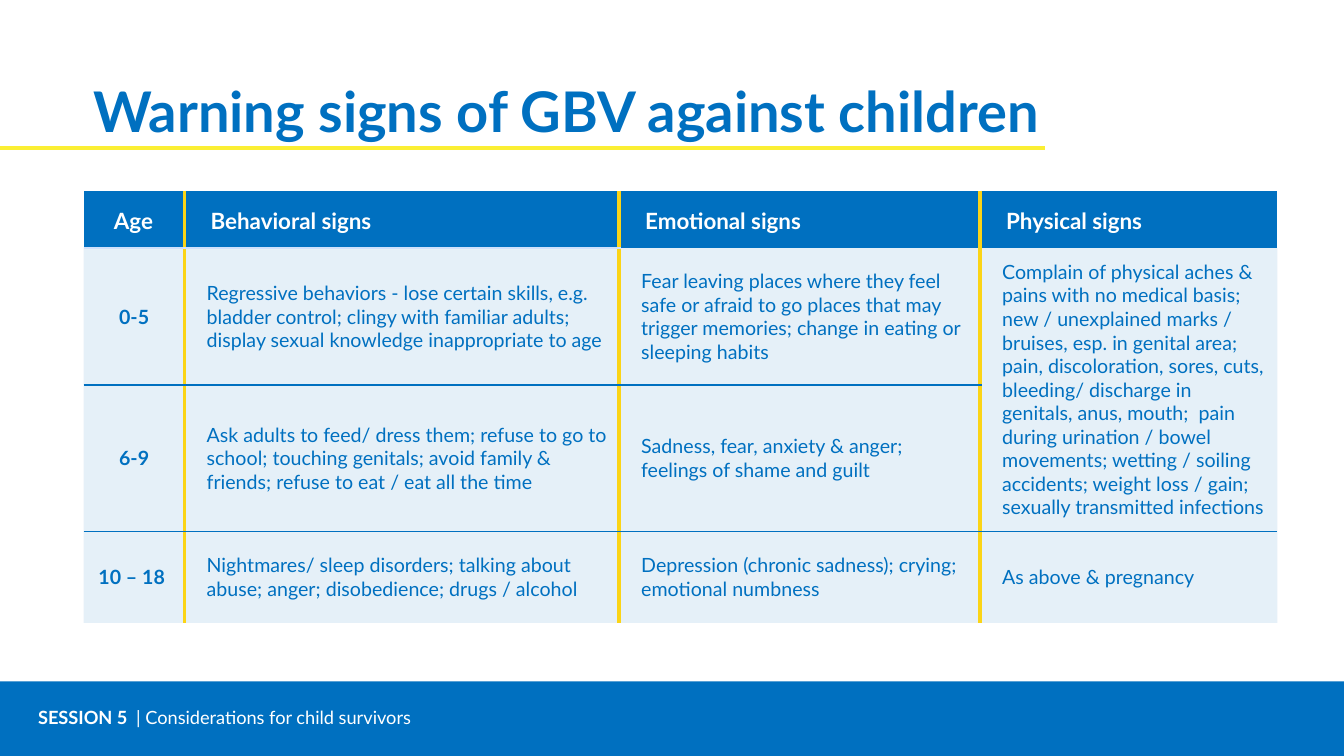
from dataclasses import dataclass

from lxml.etree import SubElement as Sub
from pptx import Presentation
from pptx.dml.color import RGBColor as RGB
from pptx.enum.shapes import MSO_CONNECTOR as Link, MSO_SHAPE as Shape
from pptx.enum.text import MSO_ANCHOR as Anchor, PP_ALIGN as Align
from pptx.oxml.ns import qn
from pptx.util import Inches, Pt

FONT = "Lato"
COLORS = {
    "blue": "0070C0",
    "pale": "CFE1FC",
    "gold": "FBD416",
    "lemon": "FBEF33",
    "white": "FFFFFF",
}
WIDTHS = [1, 4.31, 3.58, 2.95]
HEIGHTS = [0.57, 1.36, 1.45, 0.91]


@dataclass
class Style:
    size: float
    color: str
    bold: bool = False
    align: Align = Align.LEFT


@dataclass
class Kind:
    style: Style
    anchor: Anchor
    left: float
    top: float
    alpha: int = 100


HEAD = Style(16, "white", True)
KINDS = {
    "corner": Kind(HEAD, Anchor.TOP, 0.3, 0.17),
    "head": Kind(HEAD, Anchor.TOP, 0.26, 0.17),
    "age": Kind(Style(14, "blue", True, Align.CENTER), Anchor.MIDDLE, 0.1, 0.05, 10),
    "body": Kind(Style(14, "blue"), Anchor.MIDDLE, 0.22, 0.05, 10),
}
ROWS = [
    ["Age", "Behavioral signs", "Emotional signs", "Physical signs"],
    [
        "0-5",
        "Regressive behaviors - lose certain skills, e.g. bladder control; "
        "clingy with familiar adults; display sexual knowledge inappropriate to age",
        "Fear leaving places where they feel safe or afraid to go places that may "
        "trigger memories; change in eating or sleeping habits",
        "Complain of physical aches & pains with no medical basis; "
        "new / unexplained marks / bruises, esp. in genital area;\n"
        "pain, discoloration, sores, cuts, bleeding/ discharge in genitals, anus, "
        "mouth;  pain during urination / bowel movements; wetting / soiling accidents; "
        "weight loss / gain; sexually transmitted infections",
    ],
    [
        "6-9",
        "Ask adults to feed/ dress them; refuse to go to school; touching genitals; "
        "avoid family & friends; refuse to eat / eat all the time",
        "Sadness, fear, anxiety & anger; feelings of shame and guilt",
        "",
    ],
    [
        "10 – 18 ",
        "Nightmares/ sleep disorders; talking about abuse; anger; disobedience; "
        "drugs / alcohol",
        "Depression (chronic sadness); crying; emotional numbness",
        "As above & pregnancy",
    ],
]


def tint(name: str) -> RGB:
    return RGB.from_string(COLORS[name])


def dress(font, style: Style) -> None:
    font.name = FONT
    font.size = Pt(style.size)
    font.bold = style.bold
    font.color.rgb = tint(style.color)


def box(slide, area: list[float], color: str):
    shape = slide.shapes.add_shape(Shape.RECTANGLE, *map(Inches, area))
    shape.shadow.inherit = False
    shape.fill.solid()
    shape.fill.fore_color.rgb = tint(color)
    shape.line.fill.background()
    return shape


def edge(props, side: str, color: str | None, width: float) -> None:
    line = Sub(props, qn(f"a:ln{side}"), w=str(Pt(width)))
    if color:
        fill = Sub(line, qn("a:solidFill"))
        Sub(fill, qn("a:srgbClr"), val=COLORS[color])
    else:
        Sub(line, qn("a:noFill"))


def rule(row: int, col: int) -> str | None:
    """Colour of the line under a row; row -1 is the top of the table."""
    if row == 0:
        return "pale" if col < 2 else None
    if row == 1 and col == 3:
        return None
    return "blue" if 0 < row < len(ROWS) - 1 else None


def paint(cell, row: int, col: int) -> None:
    if row == 0:
        kind = KINDS["head" if col else "corner"]
    else:
        kind = KINDS["body" if col else "age"]
    cell.vertical_anchor = kind.anchor
    cell.margin_left, cell.margin_top = Inches(kind.left), Inches(kind.top)
    cell.margin_right, cell.margin_bottom = Inches(0.1), Inches(0.05)

    # Borders come before the fill in the cell properties
    props = cell._tc.get_or_add_tcPr()
    edge(props, "L", "gold" if col else None, 3)
    edge(props, "R", "gold" if col < len(WIDTHS) - 1 else None, 3)
    edge(props, "T", rule(row - 1, col), 1)
    edge(props, "B", rule(row, col), 1)
    cell.fill.solid()
    cell.fill.fore_color.rgb = tint("blue")
    if kind.alpha < 100:
        color = props.find(qn("a:solidFill")).find(qn("a:srgbClr"))
        Sub(color, qn("a:alpha"), val=str(kind.alpha * 1000))

    if ROWS[row][col]:
        cell.text = ROWS[row][col]
        for para in cell.text_frame.paragraphs:
            para.alignment = kind.style.align
            dress(para.font, kind.style)


def chart_signs(slide) -> None:
    area = map(Inches, (0.83, 1.89, sum(WIDTHS), sum(HEIGHTS)))
    table = slide.shapes.add_table(len(HEIGHTS), len(WIDTHS), *area).table
    table.horz_banding = False
    for col, width in zip(table.columns, WIDTHS):
        col.width = Inches(width)
    for row, height in zip(table.rows, HEIGHTS):
        row.height = Inches(height)
    table.cell(1, 3).merge(table.cell(2, 3))
    for row in range(len(HEIGHTS)):
        for col in range(len(WIDTHS)):
            paint(table.cell(row, col), row, col)


def main() -> None:
    deck = Presentation()
    deck.slide_width, deck.slide_height = Inches(13.33), Inches(7.5)
    slide = deck.slides.add_slide(deck.slide_layouts[6])

    # Footer
    box(slide, [0, 6.76, 13.33, 0.74], "blue")
    frame = box(slide, [0.28, 6.96, 6.96, 0.32], "blue").text_frame
    frame.word_wrap = True
    para = frame.paragraphs[0]
    para.alignment = Align.LEFT
    for text, bold in (("SESSION 5  ", True), ("| Considerations for child survivors", False)):
        run = para.add_run()
        run.text = text
        dress(run.font, Style(13, "white", bold))

    # Title and its underline
    area = map(Inches, (0.83, 0.75, 12.06, 0.72))
    frame = slide.shapes.add_textbox(*area).text_frame
    frame.word_wrap = True
    frame.vertical_anchor = Anchor.BOTTOM
    para = frame.paragraphs[0]
    para.text = "Warning signs of GBV against children"
    dress(para.font, Style(40, "blue", True))
    ends = map(Inches, (10.36, 1.47, -1.09, 1.47))
    line = slide.shapes.add_connector(Link.STRAIGHT, *ends)
    line.line.color.rgb = tint("lemon")
    line.line.width = Pt(3)
    Sub(line._element.spPr, qn("a:effectLst"))

    # Table
    chart_signs(slide)
    deck.save("out.pptx")


if __name__ == "__main__":
    main()
